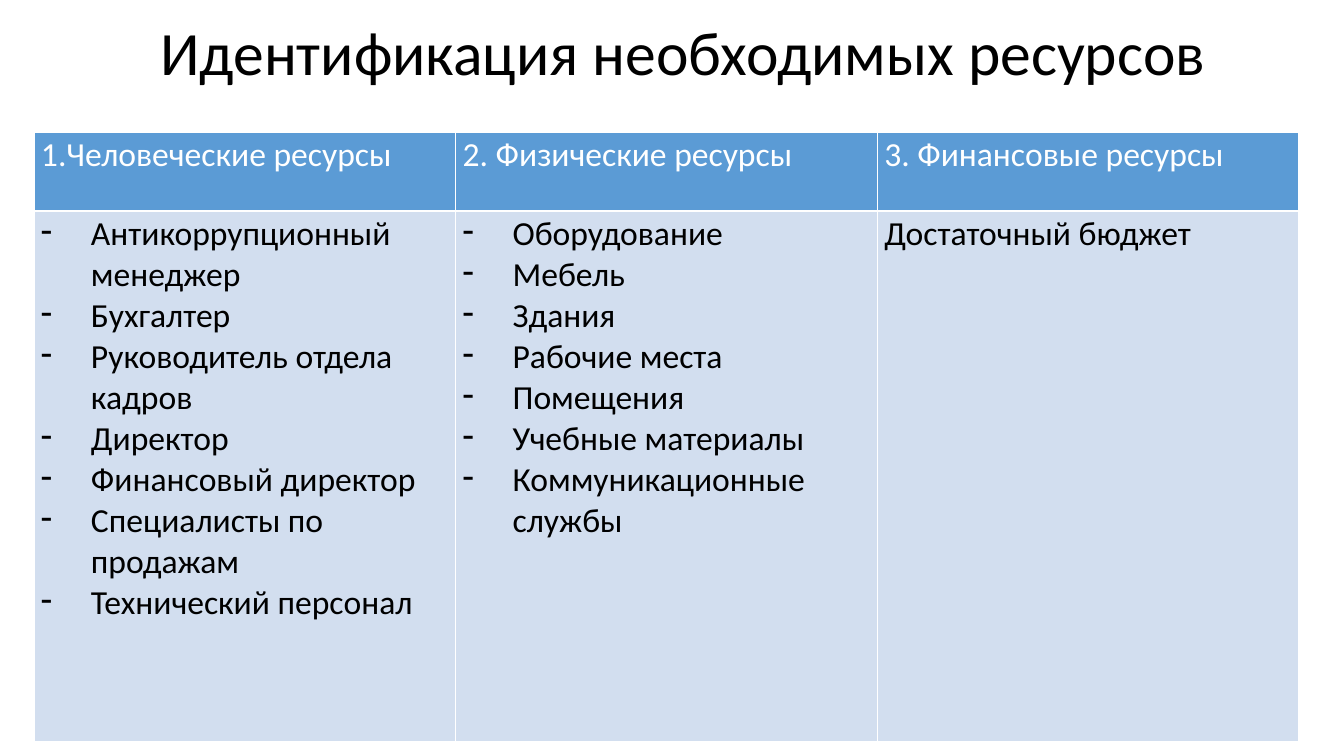
from lxml import etree
from pptx import Presentation
from pptx.dml.color import RGBColor
from pptx.enum.text import MSO_ANCHOR, PP_ALIGN
from pptx.oxml.ns import qn
from pptx.util import Pt

LEFT, MIDDLE = PP_ALIGN.LEFT, MSO_ANCHOR.MIDDLE
PX = 914400 / 100.8
COLORS = {"black": "000000", "white": "FFFFFF", "head": "5B9BD5", "body": "D2DEEF"}
FONT = "Calibri"
TITLE = "Идентификация необходимых ресурсов"
HEADS = ["1.Человеческие ресурсы", "2. Физические ресурсы", "3. Финансовые ресурсы"]
LISTS = [
    ["Антикоррупционный менеджер", "Бухгалтер", "Руководитель отдела кадров",
     "Директор", "Финансовый директор", "Специалисты по продажам",
     "Технический персонал"],
    ["Оборудование", "Мебель", "Здания", "Рабочие места", "Помещения",
     "Учебные материалы", "Коммуникационные службы"],
    ["Достаточный бюджет"],
]


def px(count):
    """Turn pixels into EMU."""
    return round(count * PX)


def color(name):
    """Look up a named colour."""
    return RGBColor.from_string(COLORS[name])


def write(frame, lines, size=24, tint="black", dash=False, space=None):
    """Fill a text frame with one paragraph per line."""
    frame.word_wrap = True
    for i, line in enumerate(lines):
        para = frame.paragraphs[0] if i == 0 else frame.add_paragraph()
        para.alignment = LEFT
        para.line_spacing = space
        if dash:
            props = para._p.get_or_add_pPr()
            props.set("marL", str(px(50)))
            props.set("indent", str(-px(50)))
            etree.SubElement(props, qn("a:buFontTx"))
            etree.SubElement(props, qn("a:buChar"), char="-")
        run = para.add_run()
        run.text = line
        run.font.name = FONT
        run.font.size = Pt(size)
        run.font.bold = False
        run.font.color.rgb = color(tint)


def paint(cell, fill):
    """Give a cell its insets, white borders and fill."""
    cell.margin_left = cell.margin_right = px(7)
    cell.margin_top = cell.margin_bottom = px(3)
    props = cell._tc.get_or_add_tcPr()
    for side in ("lnL", "lnR", "lnT", "lnB"):
        edge = etree.SubElement(props, qn(f"a:{side}"), w=str(Pt(1)))
        solid = etree.SubElement(edge, qn("a:solidFill"))
        etree.SubElement(solid, qn("a:srgbClr"), val=COLORS["white"])
    cell.fill.solid()
    cell.fill.fore_color.rgb = color(fill)


def add_title(slide, x, y, w, h):
    """Place the slide title in its box."""
    title = slide.shapes.title
    title.left, title.top, title.width, title.height = map(px, (x, y, w, h))
    title.text_frame.vertical_anchor = MIDDLE
    write(title.text_frame, [TITLE], size=44, space=0.9)


def add_grid(slide, x, y, w, h, head=79):
    """Place the table of resources in its box."""
    count = len(HEADS)
    table = slide.shapes.add_table(2, count, *map(px, (x, y, w, h))).table
    table.rows[0].height = px(head)
    table.rows[1].height = px(h - head)
    for i, (name, items) in enumerate(zip(HEADS, LISTS)):
        table.columns[i].width = px(w / count)
        top, low = table.cell(0, i), table.cell(1, i)
        paint(top, "head")
        paint(low, "body")
        write(top.text_frame, [name], tint="white")
        write(low.text_frame, items, dash=len(items) > 1)


def main():
    """Build and save the slide."""
    deck = Presentation()
    deck.slide_width, deck.slide_height = px(1344), px(756)
    slide = deck.slides.add_slide(deck.slide_layouts[5])
    add_title(slide, 150, 14, 1158, 84)
    add_grid(slide, 34, 132, 1265, 610)
    deck.save("out.pptx")


if __name__ == "__main__":
    main()
